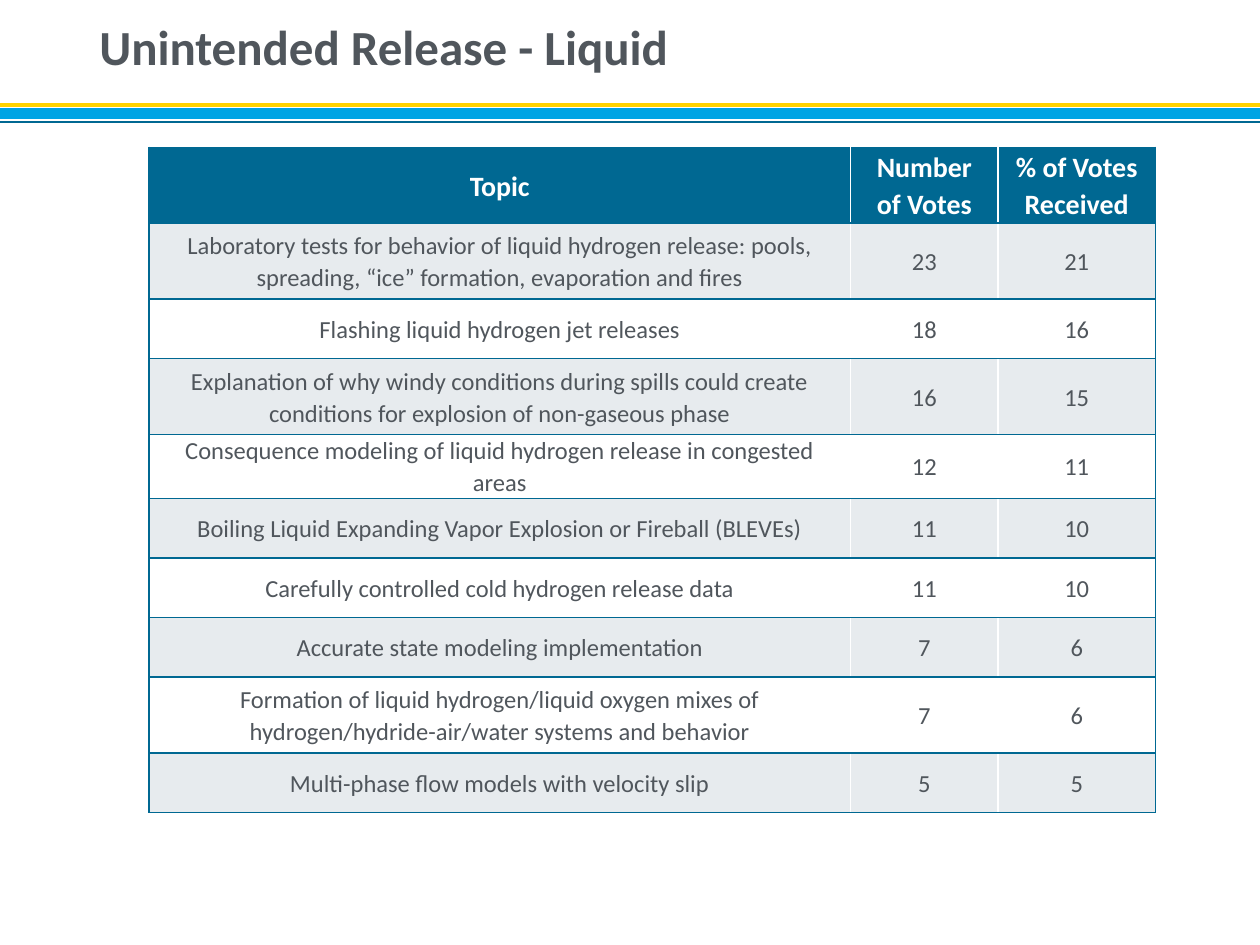
from dataclasses import dataclass

from lxml import etree
from pptx import Presentation
from pptx import util as u
from pptx.dml.color import RGBColor
from pptx.enum import shapes, text
from pptx.oxml import ns


@dataclass(frozen=True)
class Theme:
    """Colours, font and type sizes of the slide."""
    ink: str = "50565C"
    teal: str = "006892"
    blue: str = "00A4E4"
    gold: str = "FFD200"
    band: str = "E7EBEE"
    white: str = "FFFFFF"
    font: str = "Calibri"
    title: int = 28
    head: int = 16
    body: int = 14


LOOK = Theme()
SHORT, TALL = 1.2, 1.53
COLS = (14.15, 2.97, 3.17)
HEAD = ("Topic", "Number of Votes", "% of Votes Received")
ROWS = (
    ("Laboratory tests for behavior of liquid hydrogen release: pools, "
     "spreading, “ice” formation, evaporation and fires", 23, 21, TALL),
    ("Flashing liquid hydrogen jet releases", 18, 16, SHORT),
    ("Explanation of why windy conditions during spills could create "
     "conditions for explosion of non-gaseous phase", 16, 15, TALL),
    ("Consequence modeling of liquid hydrogen release in congested areas", 12, 11, SHORT),
    ("Boiling Liquid Expanding Vapor Explosion or Fireball (BLEVEs)", 11, 10, SHORT),
    ("Carefully controlled cold hydrogen release data", 11, 10, SHORT),
    ("Accurate state modeling implementation", 7, 6, SHORT),
    ("Formation of liquid hydrogen/liquid oxygen mixes of "
     "hydrogen/hydride-air/water systems and behavior", 7, 6, TALL),
    ("Multi-phase flow models with velocity slip", 5, 5, SHORT),
)


def apply(obj, vals):
    """Set each attribute named in vals on obj."""
    for name, val in vals.items():
        setattr(obj, name, val)


def write(frame, words, size, tint, bold, align, lead):
    """Put one formatted paragraph in a text frame."""
    frame.text = words
    para = frame.paragraphs[0]
    apply(para, {"alignment": align, "line_spacing": lead, "space_before": u.Pt(0)})
    apply(para.runs[0].font, {"name": LOOK.font, "size": u.Pt(size), "bold": bold})
    para.runs[0].font.color.rgb = RGBColor.from_string(tint)


def add_title(slide, words):
    """Place and fill the title."""
    title = slide.shapes.title
    apply(title, {"left": u.Cm(1.75), "top": u.Cm(0),
                  "width": u.Cm(21.9), "height": u.Cm(2)})
    apply(title.text_frame, {"vertical_anchor": text.MSO_ANCHOR.MIDDLE, "word_wrap": True})
    write(title.text_frame, words, LOOK.title, LOOK.ink, True, text.PP_ALIGN.LEFT, 0.9)


def add_stripe(slide, top, tint, weight):
    """Draw a line across the full width of the slide."""
    line = slide.shapes.add_connector(
        shapes.MSO_CONNECTOR.STRAIGHT, 0, u.Cm(top), u.Cm(25.4), u.Cm(top))
    line.line.color.rgb = RGBColor.from_string(tint)
    line.line.width = u.Pt(weight)
    etree.SubElement(line._element.spPr, ns.qn("a:effectLst"))


def add_edges(cell, sides):
    """Draw borders on the sides of a cell, given in L, R, T, B order."""
    props = cell._tc.get_or_add_tcPr()
    for spot, side in enumerate(sides):
        edge = etree.Element(ns.qn(f"a:ln{side}"), w=str(u.Pt(1)))
        fill = etree.SubElement(edge, ns.qn("a:solidFill"))
        etree.SubElement(fill, ns.qn("a:srgbClr"), val=LOOK.teal)
        props.insert(spot, edge)


def fill_cell(cell, words, fill, sides, *style):
    """Fill, pad, border and write one table cell."""
    apply(cell, {"margin_left": u.Cm(0.28), "margin_right": u.Cm(0.28),
                 "margin_top": 0, "margin_bottom": 0,
                 "vertical_anchor": text.MSO_ANCHOR.MIDDLE})
    cell.fill.solid()
    cell.fill.fore_color.rgb = RGBColor.from_string(fill)
    add_edges(cell, sides)
    write(cell.text_frame, words, *style, text.PP_ALIGN.CENTER, 1.07)


def add_votes(slide):
    """Build the table of topics and votes."""
    highs = [TALL] + [row[-1] for row in ROWS]
    grid = slide.shapes.add_table(
        len(highs), len(COLS), u.Cm(3), u.Cm(2.97),
        u.Cm(sum(COLS)), u.Cm(sum(highs))).table
    for col, width in zip(grid.columns, COLS):
        col.width = u.Cm(width)
    for row, high in zip(grid.rows, highs):
        row.height = u.Cm(high)
    for r, row in enumerate([HEAD] + [row[:-1] for row in ROWS]):
        if r == 0:
            fill, style = LOOK.teal, (LOOK.head, LOOK.white, True)
        else:
            fill = LOOK.band if r % 2 else LOOK.white
            style = (LOOK.body, LOOK.ink, False)
        for c, (words, sides) in enumerate(zip(row, ("LTB", "TB", "RTB"))):
            fill_cell(grid.cell(r, c), str(words), fill, sides, *style)


def main():
    """Build and save the slide."""
    deck = Presentation()
    apply(deck, {"slide_width": u.Cm(25.4), "slide_height": u.Cm(19.05)})
    slide = deck.slides.add_slide(deck.slide_layouts[5])
    for stripe in ((2.29, LOOK.blue, 6), (2.46, LOOK.teal, 1.5), (2.11, LOOK.gold, 2.25)):
        add_stripe(slide, *stripe)
    add_title(slide, "Unintended Release - Liquid")
    add_votes(slide)
    deck.save("out.pptx")


if __name__ == "__main__":
    main()
